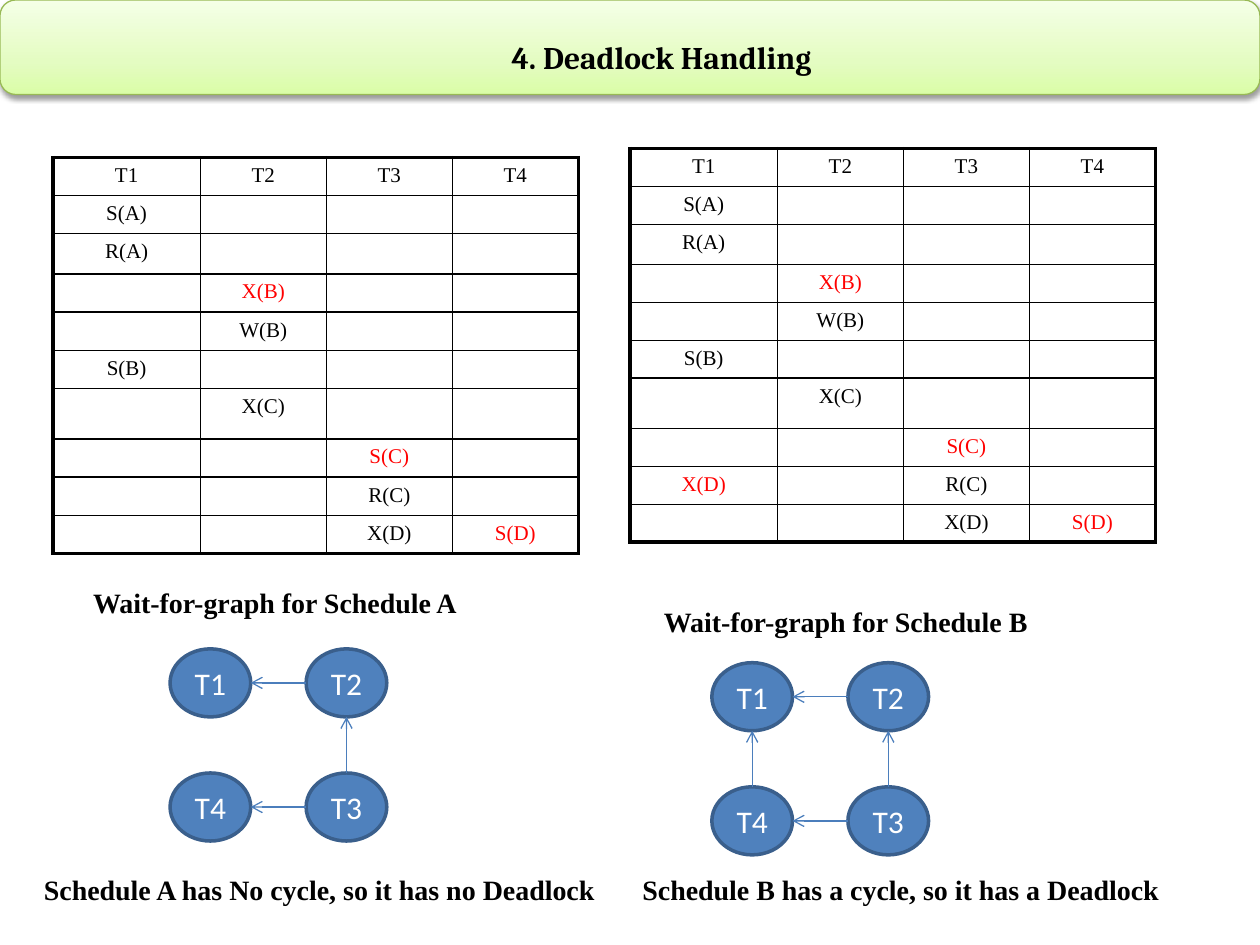
from pptx import Presentation
from pptx.dml.color import RGBColor
from pptx.enum.shapes import MSO_CONNECTOR, MSO_SHAPE
from pptx.enum.text import MSO_ANCHOR, MSO_AUTO_SIZE, PP_ALIGN
from pptx.oxml import parse_xml
from pptx.oxml.ns import nsdecls, qn
from pptx.util import Inches, Pt
from copy import deepcopy

TITLE = "4. Deadlock Handling"
HEAD = ["T1", "T2", "T3", "T4"]
STEPS = [  # column of the transaction, action
    [(0, "S(A)")],
    [(0, "R(A)")],
    [(1, "X(B)")],
    [(1, "W(B)")],
    [(0, "S(B)")],
    [(1, "X(C)")],
    [(2, "S(C)")],
    [(2, "R(C)")],
    [(2, "X(D)"), (3, "S(D)")],
]
WAITS = {"X(B)", "S(C)", "S(D)"}
EDGES = [("T2", "T1"), ("T3", "T4"), ("T3", "T2")]
PLANS = [
    dict(table=(0.42, 1.25), extra={}, graph=(1.35, 5.15), edges=EDGES,
         notes=[("Wait-for-graph for Schedule A", 0.64, 4.6, 3.14),
                ("Schedule A has No cycle, so it has no Deadlock", 0.25, 6.88, 4.63)]),
    dict(table=(5, 1.18), extra={(8, 0): "X(D)"}, graph=(5.65, 5.26),
         edges=EDGES + [("T4", "T1")],
         notes=[("Wait-for-graph for Schedule B", 5.17, 4.75, 3.12),
                ("Schedule B has a cycle, so it has a Deadlock", 5, 6.88, 4.36)]),
]

COLS = [1.17, 1, 1, 1]
ROWS = [0.3, 0.3, 0.32, 0.3, 0.3, 0.3, 0.4, 0.3, 0.3, 0.3]
SPOTS = {"T1": (0, 0), "T2": (1, 0), "T3": (1, 1), "T4": (0, 1)}
NODE = (0.64, 0.54)
STEP = (1.08, 0.985)
SERIF = "Times New Roman"
INK = {"black": "000000", "red": "FF0000", "white": "FFFFFF", "node": "4F81BD",
       "rim": "3A5F8C", "edge": "4B7EBC", "leaf": "98B955"}
FADE = [(0, "DAFDA7"), (0.35, "E4FCC2"), (1, "F5FFE7")]


def rgb(name):
    return RGBColor.from_string(INK[name])


def style(para, size, face, color, bold=False):
    for run in para.runs:
        font = run.font
        font.size, font.name, font.bold = Pt(size), face, bold
        font.color.rgb = rgb(color)


def outline(line, color, width):
    line.color.rgb = rgb(color)
    line.width = Pt(width)


def banner(shapes):
    bar = shapes.add_shape(MSO_SHAPE.ROUNDED_RECTANGLE, 0, 0, Inches(10), Inches(0.75))
    bar.fill.gradient()
    bar.fill.gradient_angle = 90
    first = next(bar._element.spPr.iter(qn("a:gs")))
    first.addnext(deepcopy(first))
    for stop, (share, color) in zip(bar.fill.gradient_stops, FADE):
        stop.position = share
        stop.color.rgb = RGBColor.from_string(color)
    outline(bar.line, "leaf", 0.75)
    bar.shadow.inherit = False
    bar._element.spPr.find(qn("a:effectLst")).append(parse_xml(
        f'<a:outerShdw {nsdecls("a")} blurRad="{Pt(3.1)}" dist="{Pt(1.6)}" dir="5400000" '
        'rotWithShape="0"><a:srgbClr val="000000"><a:alpha val="38000"/></a:srgbClr></a:outerShdw>'))
    frame = bar.text_frame
    frame.text = TITLE
    frame.vertical_anchor = MSO_ANCHOR.MIDDLE
    frame.margin_left = Inches(0.6)
    para = frame.paragraphs[0]
    para.alignment, para.line_spacing = PP_ALIGN.CENTER, 1.5
    style(para, 18, "Cambria", "black", True)


def border(cell, outer):
    """Draw four sides; those named in outer are thick."""
    for side in "LRTB":
        width = Pt(2.25 if side in outer else 1)
        cell._tc.get_or_add_tcPr().append(parse_xml(
            f'<a:ln{side} {nsdecls("a")} w="{width}"><a:solidFill>'
            f'<a:srgbClr val="{INK["black"]}"/></a:solidFill></a:ln{side}>'))


def schedule(shapes, spot, extra):
    words = {(0, c): name for c, name in enumerate(HEAD)}
    words |= {(r, c): act for r, acts in enumerate(STEPS, 1) for c, act in acts}
    words |= extra
    size = Inches(sum(COLS)), Inches(sum(ROWS))
    grid = shapes.add_table(len(ROWS), len(COLS), *map(Inches, spot), *size).table
    grid.first_row = grid.horz_banding = False
    for col, width in zip(grid.columns, COLS):
        col.width = Inches(width)
    for r, height in enumerate(ROWS):
        grid.rows[r].height = Inches(height)
        for c in range(len(COLS)):
            cell = grid.cell(r, c)
            ends = {"L": c == 0, "R": c == len(COLS) - 1, "T": r == 0, "B": r == len(ROWS) - 1}
            border(cell, [side for side in ends if ends[side]])
            cell.fill.background()
            word = words.get((r, c), "")
            para = cell.text_frame.paragraphs[0]
            para.alignment = PP_ALIGN.CENTER
            if word:
                para.text = word
                red = word in WAITS or (r, c) in extra
                style(para, 12, SERIF, "red" if red else "black")
            else:
                para._p.append(parse_xml(f'<a:endParaRPr {nsdecls("a")} sz="1200"/>'))


def graph(shapes, spot, edges):
    group = shapes.add_group_shape().shapes
    mids = {}
    for name, place in SPOTS.items():
        x, y = (s + p * d for s, p, d in zip(spot, place, STEP))
        mids[name] = x + NODE[0] / 2, y + NODE[1] / 2
        node = group.add_shape(MSO_SHAPE.OVAL, *map(Inches, (x, y, *NODE)))
        node.shadow.inherit = False
        node.fill.solid()
        node.fill.fore_color.rgb = rgb("node")
        outline(node.line, "rim", 2)
        frame = node.text_frame
        frame.text = name
        frame.word_wrap = False
        frame.vertical_anchor = MSO_ANCHOR.MIDDLE
        frame.paragraphs[0].alignment = PP_ALIGN.CENTER
        style(frame.paragraphs[0], 18, "Calibri", "white")
    for tail, head in edges:
        # half a node in the direction of the edge, so that it runs rim to rim
        half = [(h - t) * n / 2 for t, h, n in zip(SPOTS[tail], SPOTS[head], NODE)]
        start = [m + d for m, d in zip(mids[tail], half)]
        end = [m - d for m, d in zip(mids[head], half)]
        edge = group.add_connector(MSO_CONNECTOR.STRAIGHT, *map(Inches, start + end))
        outline(edge.line, "edge", 0.75)
        edge.line._get_or_add_ln().append(
            parse_xml(f'<a:tailEnd {nsdecls("a")} type="arrow"/>'))
        edge._element.spPr.append(parse_xml(f'<a:effectLst {nsdecls("a")}/>'))


def note(shapes, text, x, y, width):
    frame = shapes.add_textbox(*map(Inches, (x, y, width, 0.37))).text_frame
    frame.text = text
    frame.word_wrap = False
    frame.auto_size = MSO_AUTO_SIZE.SHAPE_TO_FIT_TEXT
    style(frame.paragraphs[0], 16, SERIF, "black", True)


def main():
    deck = Presentation()
    deck.slide_width, deck.slide_height = Inches(10), Inches(7.5)
    shapes = deck.slides.add_slide(deck.slide_layouts[6]).shapes
    banner(shapes)
    for plan in PLANS:
        schedule(shapes, plan["table"], plan["extra"])
        graph(shapes, plan["graph"], plan["edges"])
        for item in plan["notes"]:
            note(shapes, *item)
    deck.save("out.pptx")


if __name__ == "__main__":
    main()
